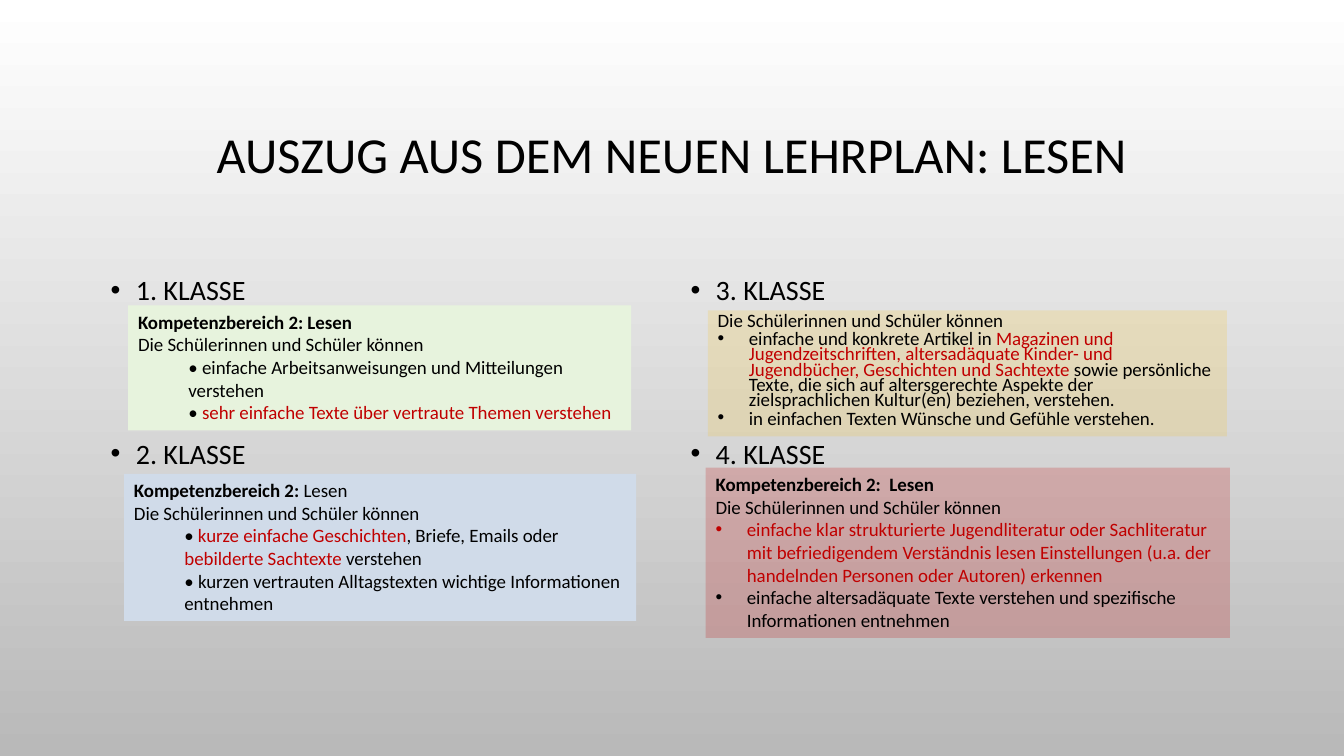
from pptx import Presentation
from pptx import util as u
from pptx.dml.color import RGBColor
from pptx.enum import shapes, text
from pptx.oxml.ns import qn
from lxml import etree

COLORS = {
    "black": "000000", "red": "C00000", "white": "FFFFFF", "grey": "B9B9B9",
    "green": "E7F3DD", "blue": "D0DBE9", "amber": "FFC000",
}
WIDTH, HEIGHT = u.Inches(13.33), u.Inches(7.5)
TITLE_FONT = {"name": "Calibri", "size": u.Pt(36)}
CLASS_FONT = {"name": "Calibri", "size": u.Pt(20)}
CARD_FONT = {"name": "Calibri", "size": u.Pt(13.5), "bold": False}
BOLD_FONT = {**CARD_FONT, "bold": True}
TIGHT = {"line_spacing": u.Pt(11), "space_before": u.Pt(2)}
INTRO = [("Die Schülerinnen und Schüler können", "black")]

CLASS_COLUMNS = [
    (7.5, ["1. KLASSE", "2. KLASSE"]),
    (50.64, ["3. KLASSE", "4. KLASSE"]),
]

CARDS = [
    ((9.53, 40.4, 37.43, 16.53), "green", 100, {}, [
        ("plain", [("Kompetenzbereich 2: Lesen", "bold")]),
        ("plain", INTRO),
        ("indent", [("• einfache Arbeitsanweisungen und Mitteilungen verstehen", "black")]),
        ("indent", [("• ", "black"),
                    ("sehr einfache Texte über vertraute Themen verstehen", "red")]),
    ]),
    ((9.23, 62.67, 38.11, 19.47), "blue", 100, {}, [
        ("plain", [("Kompetenzbereich 2: ", "bold"), ("Lesen", "black")]),
        ("plain", INTRO),
        ("indent", [("• ", "black"), ("kurze einfache Geschichten", "red"),
                    (", Briefe, Emails oder ", "black"),
                    ("bebilderte Sachtexte ", "red"), ("verstehen", "black")]),
        ("indent", [("• kurzen vertrauten Alltagstexten wichtige Informationen "
                     "entnehmen", "black")]),
    ]),
    ((52.51, 61.87, 39.01, 22.53), "red", 20, {}, [
        ("plain", [("Kompetenzbereich 2:  Lesen", "bold")]),
        ("plain", INTRO),
        ("bullet", [("einfache klar strukturierte Jugendliteratur oder Sachliteratur "
                     "mit befriedigendem Verständnis lesen Einstellungen (u.a. der "
                     "handelnden Personen oder Autoren) erkennen", "red")]),
        ("bullet", [("einfache altersadäquate Texte verstehen und spezifische "
                     "Informationen entnehmen", "black")]),
    ]),
    ((52.66, 41.07, 38.63, 16.67), "amber", 16, TIGHT, [
        ("plain", INTRO),
        ("bullet", [("einfache und konkrete Artikel in ", "black"),
                    ("Magazinen und Jugendzeitschriften, altersadäquate Kinder- und "
                     "Jugendbücher, Geschichten und Sachtexte ", "red"),
                    ("sowie persönliche Texte, die sich auf altersgerechte Aspekte der "
                     "zielsprachlichen Kultur(en) beziehen, verstehen.", "black")]),
        ("bullet", [("in einfachen Texten Wünsche und Gefühle verstehen.", "black")]),
    ]),
]


def rgb(name):
    return RGBColor.from_string(COLORS[name])


def apply(target, values):
    for name, value in values.items():
        setattr(target, name, value)


def place(left, top, width, height):
    return [u.Emu(int(share * size / 100)) for share, size in
            ((left, WIDTH), (top, HEIGHT), (width, WIDTH), (height, HEIGHT))]


def add_run(p, words, font, color="black"):
    r = p.add_run()
    r.text = words
    apply(r.font, font)
    r.font.color.rgb = rgb(color)


def indent(p, left, first=0):
    pPr = p._p.get_or_add_pPr()
    pPr.set("marL", str(u.Inches(left)))
    pPr.set("indent", str(u.Inches(first)))
    return pPr


def add_bullet(p, hang):
    pPr = indent(p, hang, -hang)
    etree.SubElement(pPr, qn("a:buFont")).set("typeface", "Arial")
    etree.SubElement(pPr, qn("a:buChar")).set("char", "•")


def paragraphs(tf, items):
    for i, item in enumerate(items):
        yield tf.add_paragraph() if i else tf.paragraphs[0], item, i == 0


def set_background(s):
    fill = s.background.fill
    fill.gradient()
    fill.gradient_angle = 270
    for stop, color, position in zip(fill.gradient_stops, ("white", "grey"), (0, 1)):
        stop.color.rgb = rgb(color)
        stop.position = position


def set_title(s, words):
    sp = s.shapes.title
    apply(sp, dict(zip(("left", "top", "width", "height"),
                       place(7.5, 9.07, 85, 23.33))))
    tf = sp.text_frame
    apply(tf, {"word_wrap": True, "vertical_anchor": text.MSO_ANCHOR.MIDDLE})
    p = tf.paragraphs[0]
    apply(p, {"alignment": text.PP_ALIGN.CENTER, "line_spacing": 0.9})
    add_run(p, words, TITLE_FONT)


def add_class_column(s, left, names):
    tf = s.shapes.add_textbox(*place(left, 34.53, 41.86, 49.87)).text_frame
    tf.word_wrap = True
    for p, name, first in paragraphs(tf, names):
        apply(p, {"line_spacing": 1.2, "space_before": u.Pt(0 if first else 88)})
        add_bullet(p, 0.25)
        add_run(p, name, CLASS_FONT)


def add_card(s, box, color, opacity, spacing, items):
    sp = s.shapes.add_shape(shapes.MSO_SHAPE.RECTANGLE, *place(*box))
    sp.shadow.inherit = False
    sp.line.fill.background()
    sp.fill.solid()
    sp.fill.fore_color.rgb = rgb(color)
    if opacity < 100:
        clr = sp._element.spPr.find(qn("a:solidFill"))[0]
        etree.SubElement(clr, qn("a:alpha")).set("val", str(opacity * 1000))
    tf = sp.text_frame
    apply(tf, {"word_wrap": True, "vertical_anchor": text.MSO_ANCHOR.TOP,
               "auto_size": text.MSO_AUTO_SIZE.SHAPE_TO_FIT_TEXT})
    for p, (kind, runs), first in paragraphs(tf, items):
        p.alignment = text.PP_ALIGN.LEFT
        apply(p, spacing)
        if first:
            p.space_before = u.Pt(0)
        if kind == "bullet":
            add_bullet(p, 0.31)
        elif kind == "indent":
            p.level = 1
            indent(p, 0.5)
        for words, style in runs:
            if style == "bold":
                add_run(p, words, BOLD_FONT)
            else:
                add_run(p, words, CARD_FONT, style)


def main():
    prs = Presentation()
    apply(prs, {"slide_width": WIDTH, "slide_height": HEIGHT})
    s = prs.slides.add_slide(prs.slide_layouts[5])
    set_background(s)
    set_title(s, "AUSZUG AUS DEM NEUEN LEHRPLAN: LESEN")
    for left, names in CLASS_COLUMNS:
        add_class_column(s, left, names)
    for card in CARDS:
        add_card(s, *card)
    prs.save("out.pptx")


if __name__ == "__main__":
    main()
